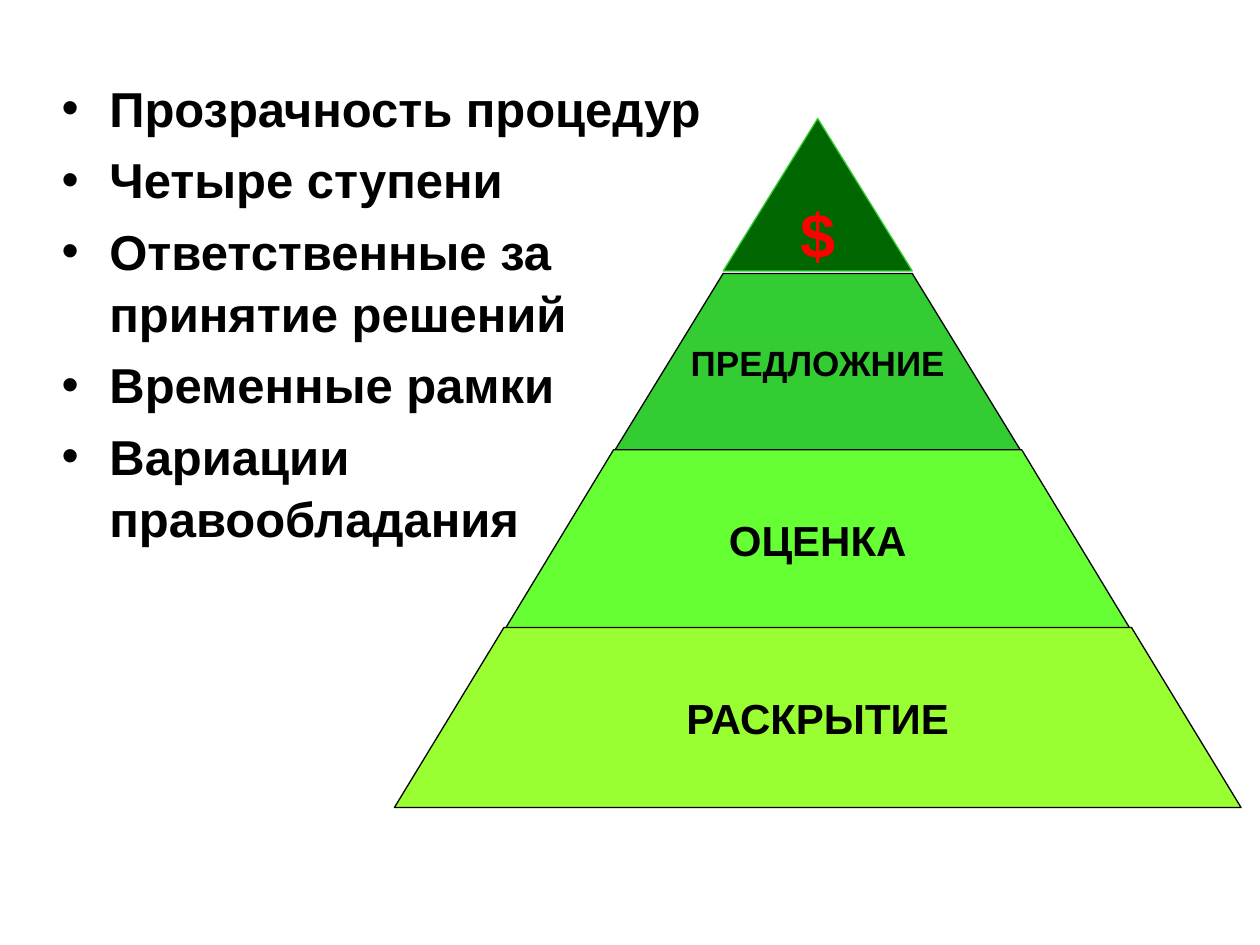
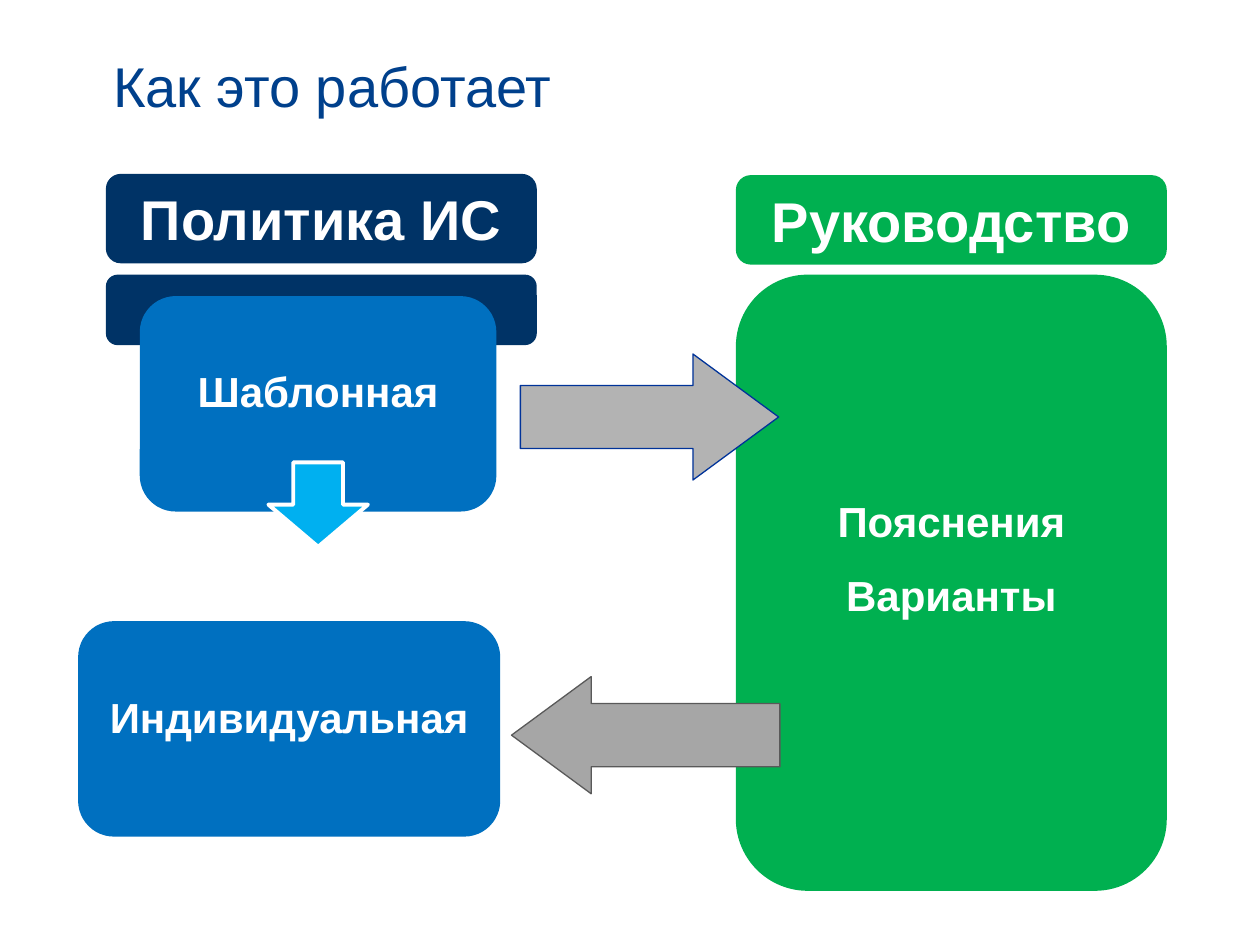
from lxml import etree
from pptx import Presentation
from pptx.dml.color import RGBColor
from pptx.enum.shapes import MSO_SHAPE
from pptx.enum.text import MSO_ANCHOR, PP_ALIGN
from pptx.oxml.ns import qn
from pptx.util import Inches, Pt

ROUNDED = MSO_SHAPE.ROUNDED_RECTANGLE
RIGHT_ARROW = MSO_SHAPE.RIGHT_ARROW
LEFT_ARROW = MSO_SHAPE.LEFT_ARROW
DOWN_ARROW = MSO_SHAPE.DOWN_ARROW
TOP, MIDDLE, BOTTOM = MSO_ANCHOR.TOP, MSO_ANCHOR.MIDDLE, MSO_ANCHOR.BOTTOM
LEFT, CENTER = PP_ALIGN.LEFT, PP_ALIGN.CENTER

FONT = "Arial"
COLORS = {
    "black": "000000", "white": "FFFFFF", "red": "FF0000", "title": "00408C",
    "tier_top": "006600", "tier_offer": "33CC33", "tier_rating": "66FF33",
    "tier_disclosure": "99FF33", "navy": "003366", "blue": "0070C0",
    "sky": "00B0F0", "green": "00B050", "arrow_out": "B3B3B3",
    "arrow_out_edge": "003399", "arrow_back": "A6A6A6", "arrow_back_edge": "595959",
}
PYRAMID_CENTER = 6.49
PANEL_WIDTH = 3.42
POLICY_LEFT, GUIDE_LEFT = 0.84, 5.84
HEADER_TOP, HEADER_HEIGHT, BODY_TOP = 1.38, 0.71, 2.18


def color(name):
    return RGBColor.from_string(COLORS[name])


def add_bullet(para, indent):
    properties = para._p.get_or_add_pPr()
    properties.set("marL", str(Inches(indent)))
    properties.set("indent", str(-Inches(indent)))
    etree.SubElement(properties, qn("a:buFont")).set("typeface", FONT)
    etree.SubElement(properties, qn("a:buChar")).set("char", "•")


def write_text(shape, *lines, size=24, ink="white", bold=True, align=CENTER,
               anchor=MIDDLE, space_before=0, line_spacing=None, bullet_indent=None,
               bottom_margin=0.05):
    frame = shape.text_frame
    frame.word_wrap = True
    frame.vertical_anchor = anchor
    frame.margin_bottom = Inches(bottom_margin)
    for index, line in enumerate(lines):
        para = frame.add_paragraph() if index else frame.paragraphs[0]
        para.alignment = align
        para.line_spacing = line_spacing
        if index:
            para.space_before = Pt(space_before)
        if bullet_indent:
            add_bullet(para, bullet_indent)
        span = para.add_run()
        span.text = line
        span.font.name = FONT
        span.font.size = Pt(size)
        span.font.bold = bold
        span.font.color.rgb = color(ink)


def paint(shape, fill, edge=None, edge_width=0.75):
    shape.shadow.inherit = False
    shape.fill.solid()
    shape.fill.fore_color.rgb = color(fill)
    if edge:
        shape.line.color.rgb = color(edge)
        shape.line.width = Pt(edge_width)
    else:
        shape.line.fill.background()


def add_text_box(page, left, top, width, height, *lines, **text_format):
    box = page.shapes.add_textbox(Inches(left), Inches(top), Inches(width), Inches(height))
    write_text(box, *lines, **text_format)


def add_tier(page, top, bottom, half_top, half_bottom, fill, edge, label, **text_format):
    corners = [(-half_top, top), (half_top, top), (half_bottom, bottom), (-half_bottom, bottom)]
    points = [(Inches(PYRAMID_CENTER + offset), Inches(y)) for offset, y in corners]
    builder = page.shapes.build_freeform(*points[0])
    builder.add_line_segments(points[1:], close=True)
    tier = builder.convert_to_shape()
    paint(tier, fill, edge)
    write_text(tier, label, **text_format)


def add_block(page, left, top, width, height, fill, *lines, **text_format):
    block = page.shapes.add_shape(
        ROUNDED, Inches(left), Inches(top), Inches(width), Inches(height))
    paint(block, fill)
    write_text(block, *lines, **text_format)


def add_arrow(page, kind, left, top, width, height, fill, edge, edge_width=0.75,
              adjustments=()):
    arrow = page.shapes.add_shape(
        kind, Inches(left), Inches(top), Inches(width), Inches(height))
    for index, value in enumerate(adjustments):
        arrow.adjustments[index] = value
    paint(arrow, fill, edge, edge_width)


def build_pyramid(page):
    add_tier(page, 0.94, 2.15, 0, 0.75, "tier_top", "tier_offer", "$",
             size=36, ink="red", anchor=BOTTOM, bottom_margin=0)
    tiers = [
        (2.17, 3.59, 0.75, 1.62, "tier_offer", "ПРЕДЛОЖНИЕ", 20),
        (3.57, 4.99, 1.62, 2.48, "tier_rating", "ОЦЕНКА", 24),
        (4.98, 6.41, 2.49, 3.36, "tier_disclosure", "РАСКРЫТИЕ", 24),
    ]
    for top, bottom, half_top, half_bottom, fill, label, size in tiers:
        add_tier(page, top, bottom, half_top, half_bottom, fill, "black", label,
                 size=size, ink="black")
    add_text_box(page, 0.39, 0.55, 5.31, 4.76,
                 "Прозрачность процедур", "Четыре ступени",
                 "Ответственные за принятие решений", "Временные рамки",
                 "Вариации правообладания",
                 size=28, ink="black", align=LEFT, anchor=TOP,
                 space_before=5.6, line_spacing=1.05, bullet_indent=0.38)


def build_workflow(page):
    add_text_box(page, 0.8, 0.05, 9, 1.25, "Как это работает",
                 size=32, ink="title", bold=False, align=LEFT)
    add_block(page, POLICY_LEFT, BODY_TOP, PANEL_WIDTH, 0.56, "navy")
    add_block(page, POLICY_LEFT, HEADER_TOP, PANEL_WIDTH, HEADER_HEIGHT, "navy",
              "Политика ИС", size=32)
    add_block(page, 1.11, 2.35, 2.83, 1.71, "blue", "Шаблонная", bottom_margin=0.25)
    add_block(page, 0.62, 4.93, 3.35, 1.71, "blue", "Индивидуальная", bottom_margin=0.25)
    add_arrow(page, DOWN_ARROW, 2.13, 3.67, 0.79, 0.67, "sky", "white", edge_width=2.25)
    add_block(page, GUIDE_LEFT, BODY_TOP, PANEL_WIDTH, 4.89, "green",
              "Пояснения", "Варианты", space_before=13.5, bottom_margin=0.45)
    add_block(page, GUIDE_LEFT, HEADER_TOP + 0.01, PANEL_WIDTH, HEADER_HEIGHT, "green",
              "Руководство", size=32)
    add_arrow(page, RIGHT_ARROW, 4.13, 2.81, 2.05, 1, "arrow_out", "arrow_out_edge",
              adjustments=(0.5, 0.68))
    add_arrow(page, LEFT_ARROW, 4.06, 5.37, 2.13, 0.93, "arrow_back", "arrow_back_edge",
              adjustments=(0.54, 0.68))


def main():
    deck = Presentation()
    deck.slide_width, deck.slide_height = Inches(10), Inches(7.5)
    blank = deck.slide_layouts[6]
    for build in (build_pyramid, build_workflow):
        build(deck.slides.add_slide(blank))
    deck.save("out.pptx")


if __name__ == "__main__":
    main()
